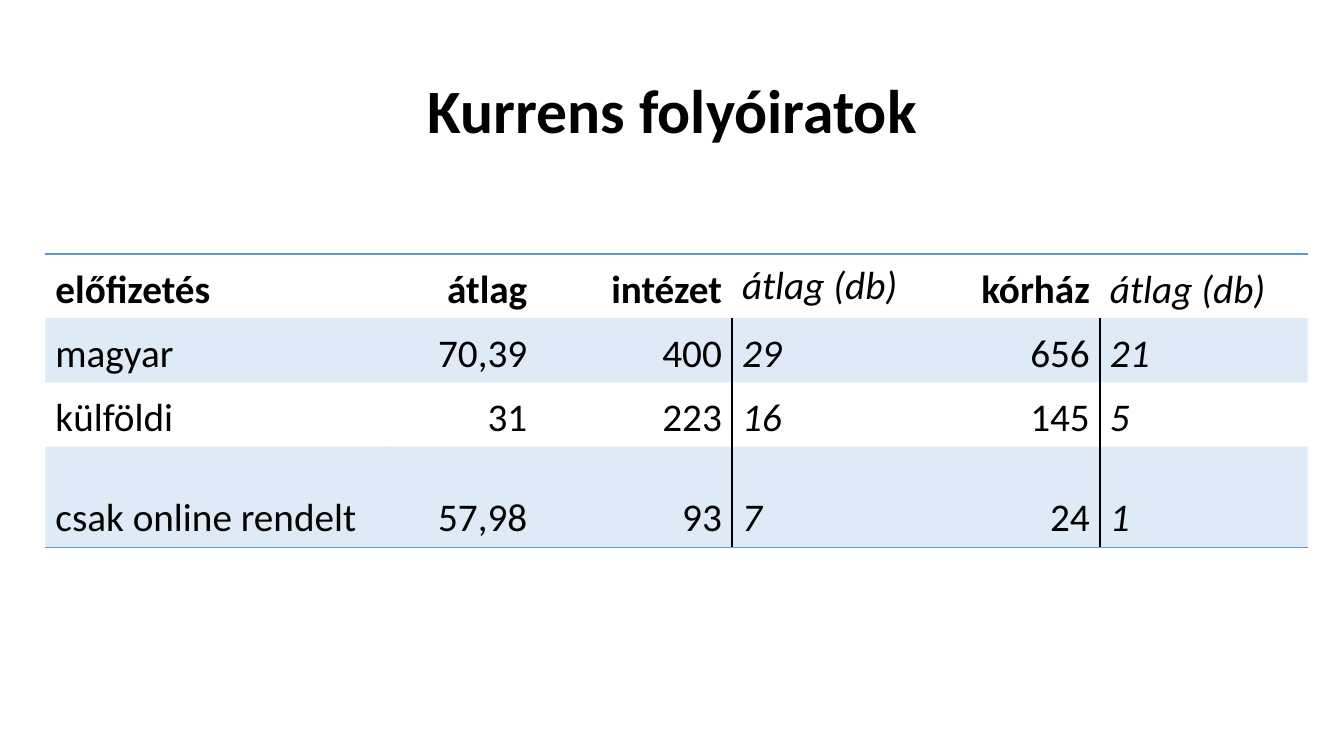
from dataclasses import dataclass

from lxml import etree
from pptx import Presentation
from pptx import util as u
from pptx.dml.color import RGBColor
from pptx.enum import text
from pptx.oxml import ns

PX = 9144  # EMU per px, 100 px to the inch
FONT = "Calibri"
COLORS = {"text": "000000", "accent": "5B9BD5", "divider": "000000"}
BAND_OPACITY = 20
NO_STYLE = "{2D5ABB26-0587-4C30-8999-92F81FD0307C}"


@dataclass(frozen=True)
class Column:
    header: str
    values: tuple[str, ...]
    width: int
    right_aligned: bool = False
    average: bool = False  # italic column with a divider on its left


COLUMNS = (
    Column("előfizetés", ("magyar", "külföldi", "csak online rendelt"), 336),
    Column("átlag", ("70,39", "31", "57,98"), 152, right_aligned=True),
    Column("intézet", ("400", "223", "93"), 193, right_aligned=True),
    Column("átlag (db)", ("29", "16", "7"), 219, average=True),
    Column("kórház", ("656", "145", "24"), 146, right_aligned=True),
    Column("átlag (db)", ("21", "5", "1"), 206, average=True),
)
ROW_HEIGHTS = (57, 57, 57, 100)
LAST_ROW = len(ROW_HEIGHTS) - 1


def px(length: int) -> u.Emu:
    return u.Emu(length * PX)


def style_paragraph(paragraph, size: int, bold: bool, italic: bool = False) -> None:
    font = paragraph.font
    font.name, font.size = FONT, u.Pt(size)
    font.bold, font.italic = bold, italic
    font.color.rgb = RGBColor.from_string(COLORS["text"])


def set_borders(cell, sides: dict[str, str]) -> None:
    """Draw 1 pt lines on the given sides (L, R, T, B) and none on the others."""
    properties = cell._tc.get_or_add_tcPr()
    for side in "LRTB":
        line = etree.SubElement(properties, ns.qn(f"a:ln{side}"), w=str(u.Pt(1)))
        if side in sides:
            fill = etree.SubElement(line, ns.qn("a:solidFill"))
            etree.SubElement(fill, ns.qn("a:srgbClr"), val=COLORS[sides[side]])
        else:
            etree.SubElement(line, ns.qn("a:noFill"))


def fill_band(cell) -> None:
    cell.fill.solid()
    cell.fill.fore_color.rgb = RGBColor.from_string(COLORS["accent"])
    color = cell._tc.tcPr.find(f".//{ns.qn('a:srgbClr')}")
    for color in cell._tc.tcPr.findall(f"{ns.qn('a:solidFill')}/{ns.qn('a:srgbClr')}"):
        etree.SubElement(color, ns.qn("a:alpha"), val=str(BAND_OPACITY * 1000))


def cell_borders(row: int, col: int) -> dict[str, str]:
    sides = {}
    if row == 0:
        sides["T"] = "accent"
    else:
        if COLUMNS[col].average:
            sides["L"] = "divider"
        if col + 1 < len(COLUMNS) and COLUMNS[col + 1].average:
            sides["R"] = "divider"
    if row == LAST_ROW:
        sides["B"] = "accent"
    return sides


def draw_cell(cell, row: int, col: int) -> None:
    column = COLUMNS[col]
    is_header = row == 0
    cell.text = (column.header, *column.values)[row]
    cell.vertical_anchor = text.MSO_ANCHOR.MIDDLE if is_header else text.MSO_ANCHOR.BOTTOM
    paragraph = cell.text_frame.paragraphs[0]
    paragraph.alignment = text.PP_ALIGN.RIGHT if column.right_aligned else text.PP_ALIGN.LEFT
    # The first average heading is set with single line spacing
    paragraph.line_spacing = 1.0 if is_header and col == 3 else 1.15
    style_paragraph(paragraph, 28, is_header and not column.average, column.average)
    set_borders(cell, cell_borders(row, col))
    if row % 2:
        fill_band(cell)
    else:
        cell.fill.background()


def draw_title(slide) -> None:
    frame = slide.shapes.add_textbox(px(92), px(40), px(1150), px(145)).text_frame
    frame.word_wrap = True
    frame.vertical_anchor = text.MSO_ANCHOR.MIDDLE
    heading = frame.paragraphs[0]
    heading.text = "Kurrens folyóiratok"
    heading.alignment = text.PP_ALIGN.CENTER
    heading.line_spacing = 0.9
    style_paragraph(heading, 44, bold=True)


def draw_subscriptions(slide) -> None:
    subscriptions = slide.shapes.add_table(
        len(ROW_HEIGHTS), len(COLUMNS), px(45), px(252),
        px(sum(column.width for column in COLUMNS)), px(sum(ROW_HEIGHTS)),
    ).table
    subscriptions.horz_banding = False
    subscriptions.first_row = False
    subscriptions._tbl.tblPr.find(ns.qn("a:tableStyleId")).text = NO_STYLE
    for col, column in enumerate(COLUMNS):
        subscriptions.columns[col].width = px(column.width)
    for row, height in enumerate(ROW_HEIGHTS):
        subscriptions.rows[row].height = px(height)
        for col in range(len(COLUMNS)):
            draw_cell(subscriptions.cell(row, col), row, col)


def main() -> None:
    deck = Presentation()
    deck.slide_width, deck.slide_height = px(1333), px(750)
    slide = deck.slides.add_slide(deck.slide_layouts[6])
    draw_title(slide)
    draw_subscriptions(slide)
    deck.save("out.pptx")


if __name__ == "__main__":
    main()
